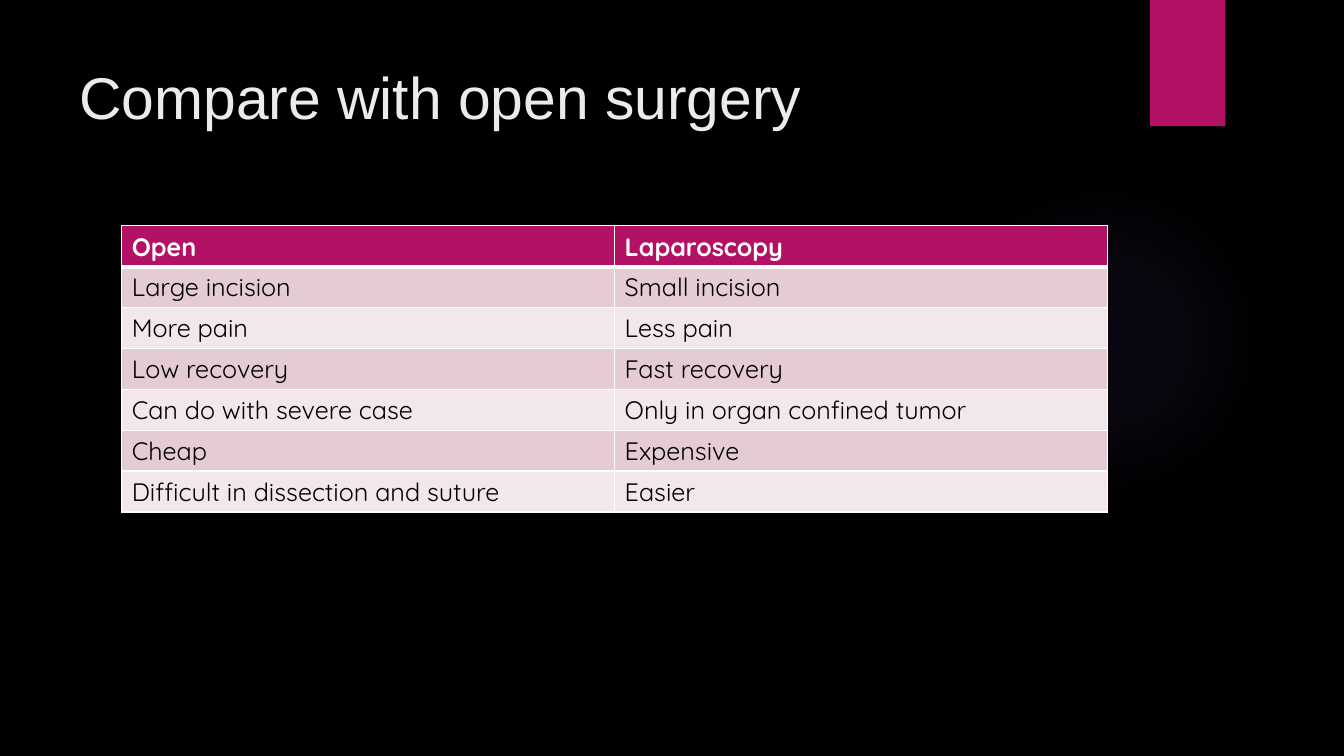
from pptx import Presentation
from pptx.dml.color import RGBColor
from pptx.enum.shapes import MSO_SHAPE as Shape
from pptx.enum.text import MSO_ANCHOR as Anchor
from pptx.oxml import parse_xml
from pptx.oxml.ns import nsdecls, qn
from pptx.util import Cm, Pt

# Content
TITLE = "Compare with open surgery"
ROWS = [
    ("Open", "Laparoscopy"),
    ("Large incision", "Small incision"),
    ("More pain", "Less pain"),
    ("Low recovery", "Fast recovery"),
    ("Can do with severe case", "Only in organ confined tumor"),
    ("Cheap", "Expensive"),
    ("Difficult in dissection and suture", "Easier"),
]
GLOW_STOPS = [(0, 7), (36, 6), (69, 0)]  # position and opacity, percent

# Colours
BLACK = RGBColor(0x00, 0x00, 0x00)
WHITE = RGBColor(0xFF, 0xFF, 0xFF)
TITLE_GREY = RGBColor(0xEB, 0xEB, 0xEB)
MAGENTA = RGBColor(0xB3, 0x11, 0x66)
VIOLET = RGBColor(0x9B, 0x6B, 0xF2)
BANDS = [RGBColor(0xF2, 0xE7, 0xEA), RGBColor(0xE5, 0xCC, 0xD3)]

# Table measures
COLUMN_WIDTH, ROW_HEIGHT = Cm(12.42), Cm(1.03)


def write(frame, text, font, size, color, bold=False):
    span = frame.paragraphs[0].add_run()
    span.text = text
    span.font.name = font
    span.font.size = Pt(size)
    span.font.bold = bold
    span.font.color.rgb = color


def add_plain_shape(page, kind, left, top, width, height):
    shape = page.shapes.add_shape(kind, left, top, width, height)
    shape.shadow.inherit = False
    shape.line.fill.background()
    return shape


def set_glow(shape):
    stops = "".join(
        f'<a:gs pos="{place * 1000}"><a:srgbClr val="{VIOLET}">'
        f'<a:alpha val="{opacity * 1000}"/></a:srgbClr></a:gs>'
        for place, opacity in GLOW_STOPS)
    shape.fill.background()
    properties = shape._element.spPr
    properties.replace(properties.find(qn("a:noFill")), parse_xml(
        f'<a:gradFill {nsdecls("a")}><a:gsLst>{stops}</a:gsLst><a:path path="circle">'
        '<a:fillToRect l="50000" t="50000" r="50000" b="50000"/></a:path></a:gradFill>'))


def set_shadow(shape):
    shape._element.spPr.find(qn("a:effectLst")).append(parse_xml(
        f'<a:outerShdw {nsdecls("a")} blurRad="{Pt(3)}" dist="{Pt(2)}" dir="5400000">'
        f'<a:srgbClr val="{BLACK}"><a:alpha val="45000"/></a:srgbClr></a:outerShdw>'))


def set_borders(cell, top, bottom):
    widths = {"lnL": 1, "lnR": 1, "lnT": top, "lnB": bottom}
    properties = cell._tc.get_or_add_tcPr()
    for place, (side, width) in enumerate(widths.items()):
        properties.insert(place, parse_xml(
            f'<a:{side} {nsdecls("a")} w="{Pt(width)}"><a:solidFill>'
            f'<a:srgbClr val="{WHITE}"/></a:solidFill></a:{side}>'))


# Page
deck = Presentation()
deck.slide_width, deck.slide_height = Cm(33.87), Cm(19.05)
page = deck.slides.add_slide(deck.slide_layouts[6])
page.background.fill.solid()
page.background.fill.fore_color.rgb = BLACK

# Background glow and corner tab
glow = add_plain_shape(page, Shape.OVAL, Cm(23.9), Cm(4.65), Cm(7.82), Cm(7.82))
set_glow(glow)
tab = add_plain_shape(page, Shape.RECTANGLE, Cm(28.98), 0, Cm(1.9), Cm(3.18))
tab.fill.solid()
tab.fill.fore_color.rgb = MAGENTA
set_shadow(tab)

# Title
box = page.shapes.add_textbox(Cm(1.8), Cm(1.27), Cm(26.14), Cm(3.89))
frame = box.text_frame
frame.word_wrap = True
frame.vertical_anchor = Anchor.TOP
frame.margin_left, frame.margin_top = Cm(0.2), Cm(0.25)
write(frame, TITLE, "Arial", 42, TITLE_GREY)

# Comparison table
table = page.shapes.add_table(
    len(ROWS), 2, Cm(3.07), Cm(5.69), 2 * COLUMN_WIDTH, len(ROWS) * ROW_HEIGHT).table
for column in table.columns:
    column.width = COLUMN_WIDTH
for r, texts in enumerate(ROWS):
    table.rows[r].height = ROW_HEIGHT
    header = r == 0
    for c, text in enumerate(texts):
        cell = table.cell(r, c)
        cell.fill.solid()
        cell.fill.fore_color.rgb = MAGENTA if header else BANDS[r % 2]
        set_borders(cell, top=3 if r == 1 else 1, bottom=3 if header else 1)
        write(cell.text_frame, text, "Quicksand", 18,
              WHITE if header else BLACK, bold=header)

deck.save("out.pptx")
